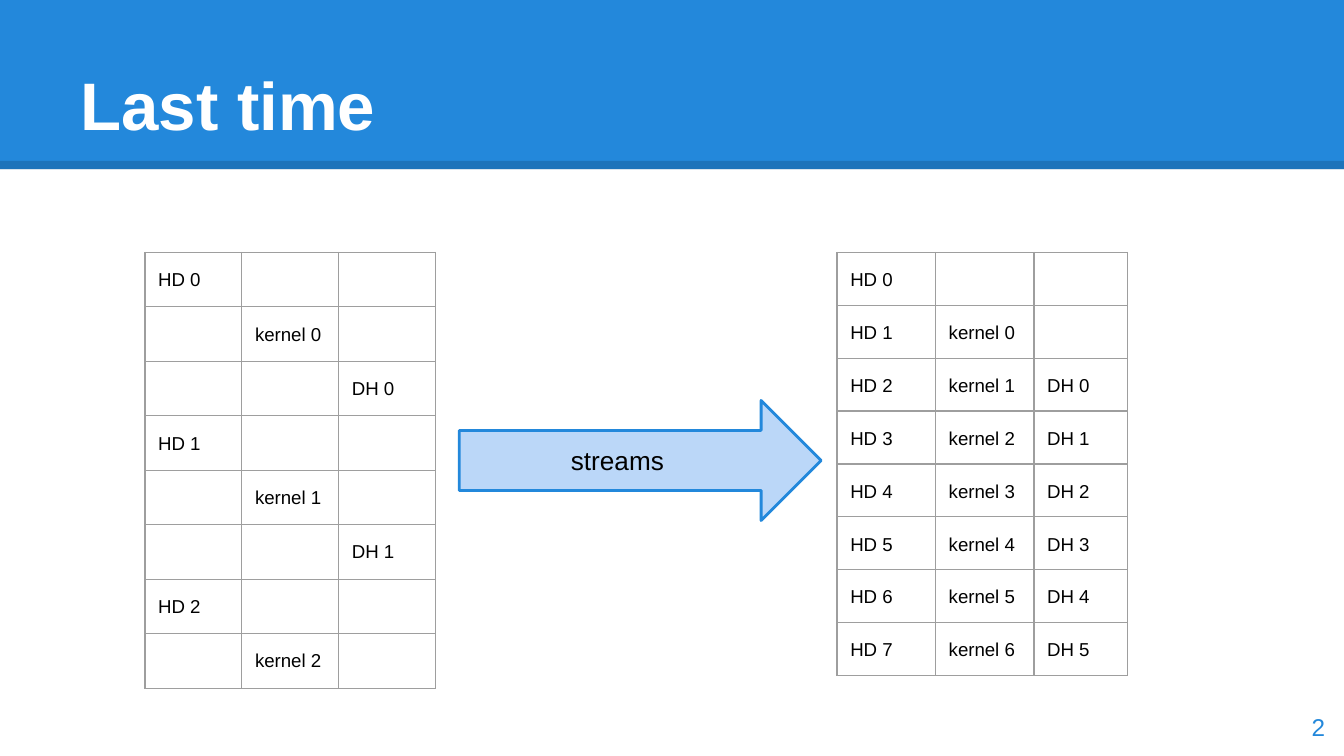
from lxml import etree
from pptx import Presentation
from pptx import util as u
from pptx.dml.color import RGBColor
from pptx.enum import shapes, text
from pptx.oxml.ns import qn

HEAD = "Last time"
LABEL = "streams"
PAGE = "2"
STAGES = ("HD", "kernel", "DH")
STEPS = 8
SERIAL = [[f"{name} {row // 3}" if row % 3 == col else ""
           for col, name in enumerate(STAGES)] for row in range(STEPS)]
STREAMS = [[f"{name} {row - col}" if row >= col else ""
            for col, name in enumerate(STAGES)] for row in range(STEPS)]
# rows of text, left edge, column widths, row height (cm)
GRIDS = [(STREAMS, 15.82, (1.86, 1.86, 1.77), 1),
         (SERIAL, 2.74, (1.83, 1.83, 1.83), 1.03)]
TOP = 4.77
WIDE, HIGH = 25.4, 14.29
FONT = "Arial"
HUES = {"blue": "2388DB", "pale": "BBD7F8", "grid": "9E9E9E",
        "black": "000000", "white": "FFFFFF"}


def hue(name):
    return RGBColor.from_string(HUES[name])


def box(*cms):
    return [u.Cm(cm) for cm in cms]


def write(frame, words, size, color, bold=False):
    """Fill a frame or cell frame with one styled line and return its paragraph."""
    frame.text = words
    frame.word_wrap = True
    para = frame.paragraphs[0]
    for run in para.runs:
        font = run.font
        font.name, font.size, font.bold = FONT, u.Pt(size), bold
        font.color.rgb = hue(color)
    return para


def pad(item):
    item.margin_left = item.margin_right = u.Cm(0.25)
    item.margin_top = item.margin_bottom = u.Cm(0.25)


def edge(cell):
    props = cell._tc.get_or_add_tcPr()
    for at, side in enumerate(("lnL", "lnR", "lnT", "lnB")):
        line = etree.Element(qn(f"a:{side}"), w=str(u.Pt(0.75)))
        fill = etree.SubElement(line, qn("a:solidFill"))
        etree.SubElement(fill, qn("a:srgbClr"), val=HUES["grid"])
        props.insert(at, line)


def grid(slide, rows, left, widths, high):
    frame = slide.shapes.add_table(
        len(rows), len(widths), *box(left, TOP, sum(widths), high * len(rows)))
    table = frame.table
    table.first_row = table.horz_banding = False
    for col, width in zip(table.columns, widths):
        col.width = u.Cm(width)
    for row, items in zip(table.rows, rows):
        row.height = u.Cm(high)
        for cell, words in zip(row.cells, items):
            pad(cell)
            para = write(cell.text_frame, words, 10, "black")
            para.line_spacing = 1.2
            if not words:  # keeps an empty cell from growing its row
                etree.SubElement(para._p, qn("a:endParaRPr"), sz="1000")
            cell.fill.background()
            edge(cell)


def shape(slide, kind, place, fill):
    item = slide.shapes.add_shape(kind, *place)
    item.shadow.inherit = False
    item.fill.solid()
    item.fill.fore_color.rgb = hue(fill)
    item.line.fill.background()
    return item


def label(slide, words, place, size, color):
    frame = slide.shapes.add_textbox(*place).text_frame
    pad(frame)
    return frame, write(frame, words, size, color)


def band(slide):
    shape(slide, shapes.MSO_SHAPE.RECTANGLE, box(0, 0, WIDE, 3.2), "blue")
    rule = slide.shapes.add_connector(
        shapes.MSO_CONNECTOR.STRAIGHT, *box(0, 3.12, WIDE, 3.12))
    rule.line.width = u.Pt(4.5)
    rule.line.color.rgb = hue("black")
    props = rule._element.spPr
    color = props.find(".//" + qn("a:srgbClr"))
    etree.SubElement(color, qn("a:alpha"), val="15000")
    etree.SubElement(props, qn("a:effectLst"))


def title(slide):
    head = slide.shapes.title
    slide.shapes._spTree.append(head._element)  # in front of the band
    head.left, head.top, head.width, head.height = box(1.27, 0.58, 22.86, 2.39)
    frame = head.text_frame
    pad(frame)
    frame.vertical_anchor = text.MSO_ANCHOR.BOTTOM
    frame.auto_size = text.MSO_AUTO_SIZE.NONE
    write(frame, HEAD, 36, "white", True).alignment = text.PP_ALIGN.LEFT


def main():
    deck = Presentation()
    deck.slide_width, deck.slide_height = box(WIDE, HIGH)
    slide = deck.slides.add_slide(deck.slide_layouts[5])
    band(slide)
    title(slide)
    for spec_row in GRIDS:
        grid(slide, *spec_row)
    arrow = shape(slide, shapes.MSO_SHAPE.RIGHT_ARROW,
                  box(8.68, 7.57, 6.84, 2.27), "pale")
    arrow.line.color.rgb = hue("blue")
    arrow.line.width = u.Pt(1.5)
    label(slide, LABEL, box(10.54, 8.15, 3.12, 0.74), 14, "black")
    frame, para = label(slide, PAGE, box(23.77, 13.19, 1.52, 1.09), 13, "blue")
    frame.vertical_anchor = text.MSO_ANCHOR.MIDDLE
    para.alignment = text.PP_ALIGN.RIGHT
    deck.save("out.pptx")


if __name__ == "__main__":
    main()
